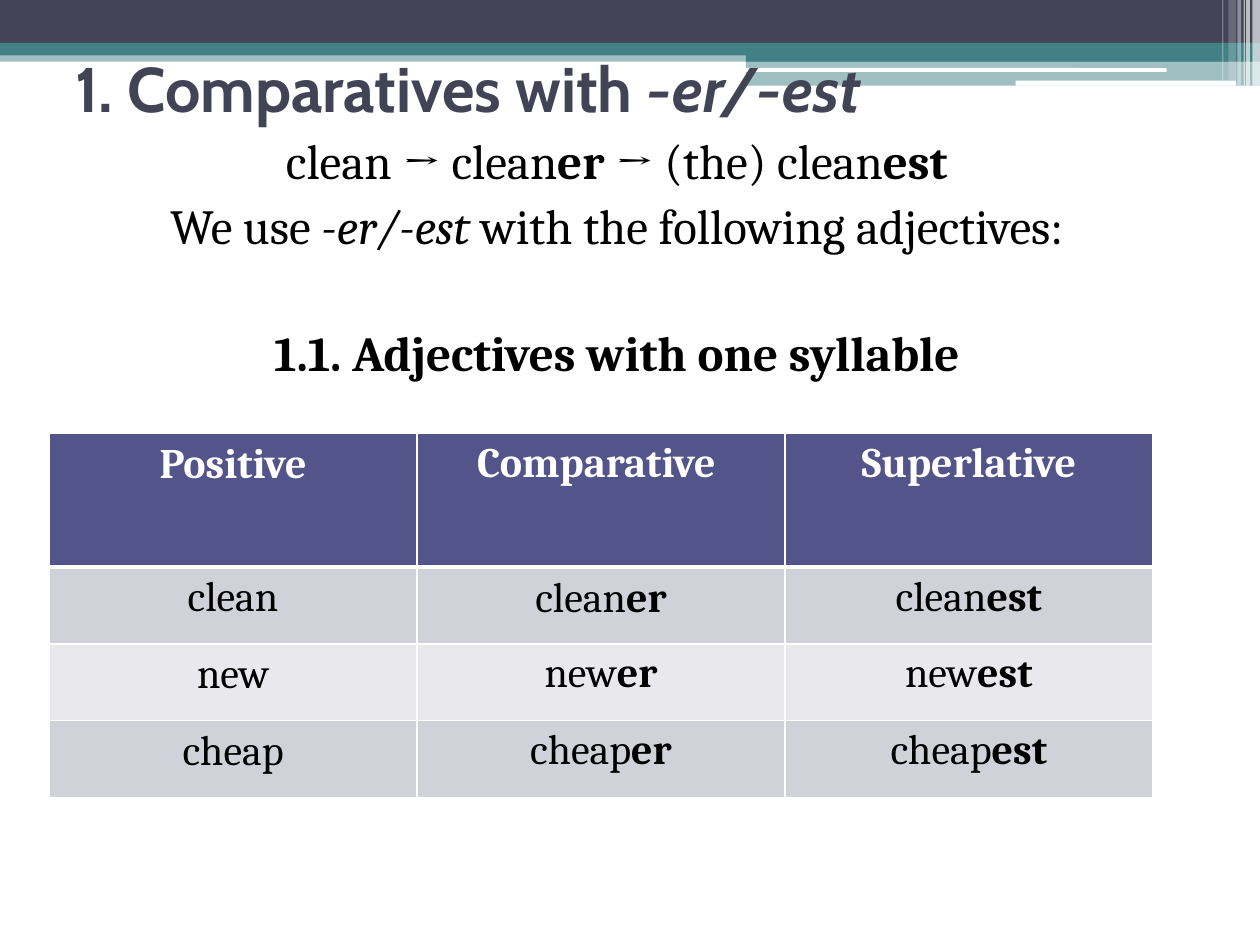
from typing import NamedTuple

import pptx
import pptx.dml.color
import pptx.enum.shapes
import pptx.enum.text
import pptx.oxml
import pptx.oxml.ns
import pptx.util

Inches = pptx.util.Inches
Pt = pptx.util.Pt
RGBColor = pptx.dml.color.RGBColor
Shape = pptx.enum.shapes.MSO_SHAPE
Align = pptx.enum.text.PP_ALIGN
Anchor = pptx.enum.text.MSO_ANCHOR

NAVY = RGBColor(0x42, 0x44, 0x56)
TEAL = RGBColor(0x43, 0x80, 0x86)
PURPLE = RGBColor(0x53, 0x54, 0x8A)
DARK_ROW = RGBColor(0xD1, 0xD1, 0xDA)
LIGHT_ROW = RGBColor(0xE9, 0xE9, 0xED)
WHITE = RGBColor(0xFF, 0xFF, 0xFF)
BLACK = RGBColor(0, 0, 0)


class Band(NamedTuple):
    left: float
    top: float
    width: float
    height: float
    color: RGBColor
    opacity: int = 100
    kind: Shape = Shape.RECTANGLE


class Adjective(NamedTuple):
    stem: str
    spaced_column: int  # the column set with wider line spacing


BANDS = [
    Band(0, 0.4, 10, 0.09, TEAL, 50),
    Band(0, 0, 10, 0.34, NAVY),
    Band(0, 0.34, 10, 0.1, TEAL),
    Band(5.92, 0.39, 4.08, 0.1, TEAL),
    Band(5.92, 0.48, 4.08, 0.2, TEAL, 50),
    Band(5.91, 0.54, 3.35, 0.03, WHITE, kind=Shape.ROUNDED_RECTANGLE),
    Band(8.06, 0.64, 1.75, 0.04, WHITE, kind=Shape.ROUNDED_RECTANGLE),
    Band(9.94, 0, 0.06, 0.68, WHITE, 65),
    Band(9.89, 0, 0.03, 0.68, WHITE, 65),
    Band(9.87, 0, 0.01, 0.68, WHITE, 60),
    Band(9.82, 0, 0.03, 0.68, WHITE, 40),
    Band(9.75, 0, 0.06, 0.64, WHITE, 20),
    Band(9.7, 0, 0.01, 0.64, WHITE, 30),
]
HEADINGS = ["Positive", "Comparative ", "Superlative"]
ENDINGS = ["", "er", "est"]
ADJECTIVES = [Adjective("clean", 1), Adjective("new", 0), Adjective("cheap", 0)]


def add_text(paragraph, text: str, *, size: float, font: str = "Cambria",
             color: RGBColor = BLACK, bold: bool = False, italic: bool = False) -> None:
    run = paragraph.add_run()
    run.text = text
    run.font.size = Pt(size)
    run.font.name = font
    run.font.color.rgb = color
    run.font.bold = bold
    run.font.italic = italic


def draw_band(slide, band: Band) -> None:
    strip = slide.shapes.add_shape(band.kind, *(Inches(length) for length in band[:4]))
    strip.shadow.inherit = False
    strip.line.fill.background()
    strip.fill.solid()
    strip.fill.fore_color.rgb = band.color
    if band.opacity < 100:
        color = strip.fill._xPr.find(".//" + pptx.oxml.ns.qn("a:srgbClr"))
        alpha = color.makeelement(pptx.oxml.ns.qn("a:alpha"), {"val": str(band.opacity * 1000)})
        color.append(alpha)


def add_intro_line(frame, first: bool = False, space_before: float = 3):
    line = frame.paragraphs[0] if first else frame.add_paragraph()
    line.alignment = Align.CENTER
    line.space_before = Pt(space_before)
    properties = line._p.get_or_add_pPr()
    properties.set("marL", str(Inches(0.4)))
    properties.set("indent", str(Inches(-0.28)))
    return line


def set_borders(cell, top: float = 1, bottom: float = 1) -> None:
    properties = cell._tc.get_or_add_tcPr()
    for side, width in {"L": 1, "R": 1, "T": top, "B": bottom}.items():
        properties.append(pptx.oxml.parse_xml(
            f'<a:ln{side} {pptx.oxml.ns.nsdecls("a")} w="{Pt(width)}">'
            f'<a:solidFill><a:srgbClr val="{WHITE}"/></a:solidFill></a:ln{side}>'))


def format_cell(cell, fill: RGBColor, spaced: bool):
    cell.fill.solid()
    cell.fill.fore_color.rgb = fill
    paragraph = cell.text_frame.paragraphs[0]
    paragraph.alignment = Align.CENTER
    if spaced:
        paragraph.line_spacing = 1.15
        cell.margin_left = cell.margin_right = Inches(0.07)
        cell.margin_top = cell.margin_bottom = 0
    return paragraph


def draw_adjectives(slide) -> None:
    table = slide.shapes.add_table(4, 3, Inches(0.39), Inches(3.44),
                                   Inches(8.75), Inches(2.89)).table
    for column in table.columns:
        column.width = Inches(2.92)
    for index, row in enumerate(table.rows):
        row.height = Inches(0.61 if index else 1.06)

    for column, heading in enumerate(HEADINGS):
        cell = table.cell(0, column)
        set_borders(cell, bottom=3)
        paragraph = format_cell(cell, PURPLE, spaced=column == 0)
        add_text(paragraph, heading, size=24, color=WHITE, bold=True)

    for row, adjective in enumerate(ADJECTIVES, start=1):
        for column, ending in enumerate(ENDINGS):
            cell = table.cell(row, column)
            set_borders(cell, top=3 if row == 1 else 1)
            paragraph = format_cell(cell, DARK_ROW if row % 2 else LIGHT_ROW,
                                    spaced=column == adjective.spaced_column)
            add_text(paragraph, adjective.stem, size=24)
            if ending:
                add_text(paragraph, ending, size=24, bold=True)


def main() -> None:
    deck = pptx.Presentation()
    deck.slide_width, deck.slide_height = Inches(10), Inches(7.5)
    slide = deck.slides.add_slide(deck.slide_layouts[5])

    # Decorative header
    for band in BANDS:
        draw_band(slide, band)

    # Title, brought in front of the header
    title = slide.shapes.title
    title._element.getparent().append(title._element)
    title.left, title.top = Inches(0.5), Inches(0.3)
    title.width, title.height = Inches(9), Inches(0.79)
    title.text_frame.vertical_anchor = Anchor.MIDDLE
    title_line = title.text_frame.paragraphs[0]
    title_line.alignment = Align.LEFT
    title_format = dict(size=36, font="Cabin", color=NAVY, bold=True)
    add_text(title_line, "1. Comparatives with ", **title_format)
    add_text(title_line, "-er/-est", italic=True, **title_format)

    # Rule and section heading
    intro = slide.shapes.add_textbox(Inches(0.2), Inches(0.99),
                                     Inches(9.27), Inches(5.68)).text_frame
    intro.word_wrap = True
    pattern = add_intro_line(intro, first=True)
    for text, bold in [("clean → clean", False), ("er", True),
                       (" → (the) clean", False), ("est", True)]:
        add_text(pattern, text, size=28, bold=bold)
    usage = add_intro_line(intro)
    for text, italic in [("We use ", False), ("-er/-est", True),
                         (" with the following adjectives:", False)]:
        add_text(usage, text, size=28, italic=italic)
    section = add_intro_line(intro, space_before=39)
    add_text(section, "1.1. Adjectives with one syllable", size=28, bold=True)

    # Table of forms
    draw_adjectives(slide)
    deck.save("out.pptx")


if __name__ == "__main__":
    main()
